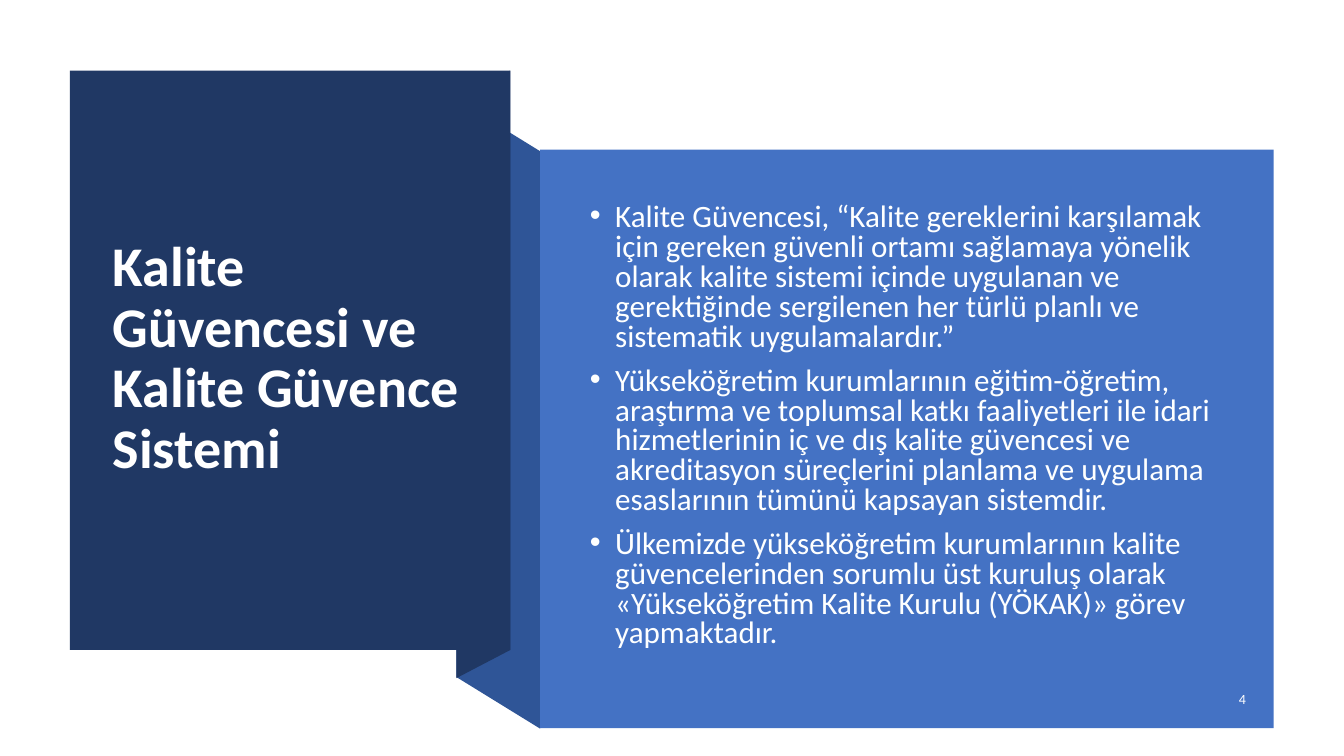
"""Build a slide on quality assurance with a folded ribbon panel."""
from collections import namedtuple

from lxml import etree
from pptx import Presentation
from pptx.dml.color import RGBColor
from pptx.enum.shapes import MSO_SHAPE
from pptx.enum.text import MSO_ANCHOR, MSO_AUTO_SIZE, PP_ALIGN
from pptx.oxml.ns import qn
from pptx.util import Cm, Pt

RECTANGLE = MSO_SHAPE.RECTANGLE
MIDDLE = MSO_ANCHOR.MIDDLE
NO_AUTOFIT = MSO_AUTO_SIZE.NONE
ALIGN_RIGHT = PP_ALIGN.RIGHT

FONT = "Calibri"
COLORS = {
    "navy": "203864",
    "fold": "2F5597",
    "blue": "4472C4",
    "white": "FFFFFF",
    "body": "FEFFFF",
}

TITLE = "Kalite Güvencesi ve Kalite Güvence Sistemi"
POINTS = [
    "Kalite Güvencesi, “Kalite gereklerini karşılamak için gereken güvenli ortamı "
    "sağlamaya yönelik olarak kalite sistemi içinde uygulanan ve gerektiğinde "
    "sergilenen her türlü planlı ve sistematik uygulamalardır.”",
    "Yükseköğretim kurumlarının eğitim-öğretim, araştırma ve toplumsal katkı "
    "faaliyetleri ile idari hizmetlerinin iç ve dış kalite güvencesi ve akreditasyon "
    "süreçlerini planlama ve uygulama esaslarının tümünü kapsayan sistemdir.",
    "Ülkemizde yükseköğretim kurumlarının kalite güvencelerinden sorumlu üst kuruluş "
    "olarak «Yükseköğretim Kalite Kurulu (YÖKAK)» görev yapmaktadır.",
]

Box = namedtuple("Box", "left top width height")


def paint(shape, color):
    """Give a shape a plain fill without line or shadow."""
    shape.shadow.inherit = False
    shape.fill.solid()
    shape.fill.fore_color.rgb = RGBColor.from_string(COLORS[color])
    shape.line.fill.background()


def add_panel(page, box, color):
    """Draw a filled rectangle over the box."""
    paint(page.shapes.add_shape(RECTANGLE, *map(Cm, box)), color)


def add_fold(page, left, right, left_top, right_top, height, color):
    """Draw a slanted band with upright sides of equal height."""
    corners = [
        (Cm(left), Cm(left_top)),
        (Cm(right), Cm(right_top)),
        (Cm(right), Cm(right_top + height)),
        (Cm(left), Cm(left_top + height)),
    ]
    builder = page.shapes.build_freeform(*corners[0])
    builder.add_line_segments(corners[1:], close=True)
    paint(builder.convert_to_shape(), color)


def place_text(shape, box):
    """Move a text shape to the box and centre its text vertically."""
    shape.left, shape.top, shape.width, shape.height = map(Cm, box)
    frame = shape.text_frame
    frame.word_wrap = True
    frame.auto_size = NO_AUTOFIT
    frame.vertical_anchor = MIDDLE
    return frame


def set_font(paragraph, size, color, bold=False):
    """Set the font of a whole paragraph."""
    font = paragraph.font
    font.name, font.size, font.bold = FONT, Pt(size), bold
    font.color.rgb = RGBColor.from_string(COLORS[color])


def bring_to_front(shape):
    """Place a shape above everything drawn so far."""
    shape.element.getparent().append(shape.element)


def add_title_panel(page, box):
    """Fill the left panel and set the title inside it."""
    add_panel(page, box, "navy")
    title = page.shapes.title
    bring_to_front(title)
    frame = place_text(title, Box(box.left + 0.83, box.top + 0.94, 9.42, 12.67))
    frame.text = TITLE
    paragraph = frame.paragraphs[0]
    paragraph.alignment = PP_ALIGN.LEFT
    paragraph.line_spacing = 0.9
    set_font(paragraph, 40, "white", bold=True)


def add_content_panel(page, box):
    """Fill the right panel and set the bullets and page number inside it."""
    add_panel(page, box, "blue")
    body = page.placeholders[1]
    bring_to_front(body)
    frame = place_text(body, Box(box.left + 1, box.top + 1.34, 16.54, 11.3))
    frame.margin_top = frame.margin_bottom = 0
    for index, point in enumerate(POINTS):
        paragraph = frame.add_paragraph() if index else frame.paragraphs[0]
        paragraph.text = point
        paragraph.line_spacing = 0.8
        paragraph.space_before = Pt(10 if index else 0)
        properties = paragraph._p.get_or_add_pPr()
        properties.set("marL", str(Cm(0.64)))
        properties.set("indent", str(Cm(-0.64)))
        etree.SubElement(properties, qn("a:buFont")).set("typeface", "Arial")
        etree.SubElement(properties, qn("a:buChar")).set("char", "•")
        set_font(paragraph, 22.2, "body")

    number_box = Box(box.left + box.width - 2.35, box.top + 13.38, 1.9, 0.9)
    number = page.shapes.add_textbox(*map(Cm, number_box))
    frame = place_text(number, number_box)
    frame.text = "4"
    paragraph = frame.paragraphs[0]
    paragraph.alignment = ALIGN_RIGHT
    paragraph.space_after = Pt(6)
    set_font(paragraph, 10, "white")


def main():
    """Build and save the deck."""
    deck = Presentation()
    deck.slide_width, deck.slide_height = Cm(33.87), Cm(19.05)
    page = deck.slides.add_slide(deck.slide_layouts[1])

    title_box = Box(1.76, 1.78, 11.1, 14.6)
    content_box = Box(13.61, 3.77, 18.49, 14.58)
    fold_left = 11.5
    title_right = title_box.left + title_box.width
    add_fold(page, fold_left, content_box.left, 2.51, 3.81, 14.55, "fold")
    add_fold(page, fold_left, title_right, 2.49, title_box.top, title_box.height, "navy")
    add_title_panel(page, title_box)
    add_content_panel(page, content_box)
    deck.save("out.pptx")


if __name__ == "__main__":
    main()
